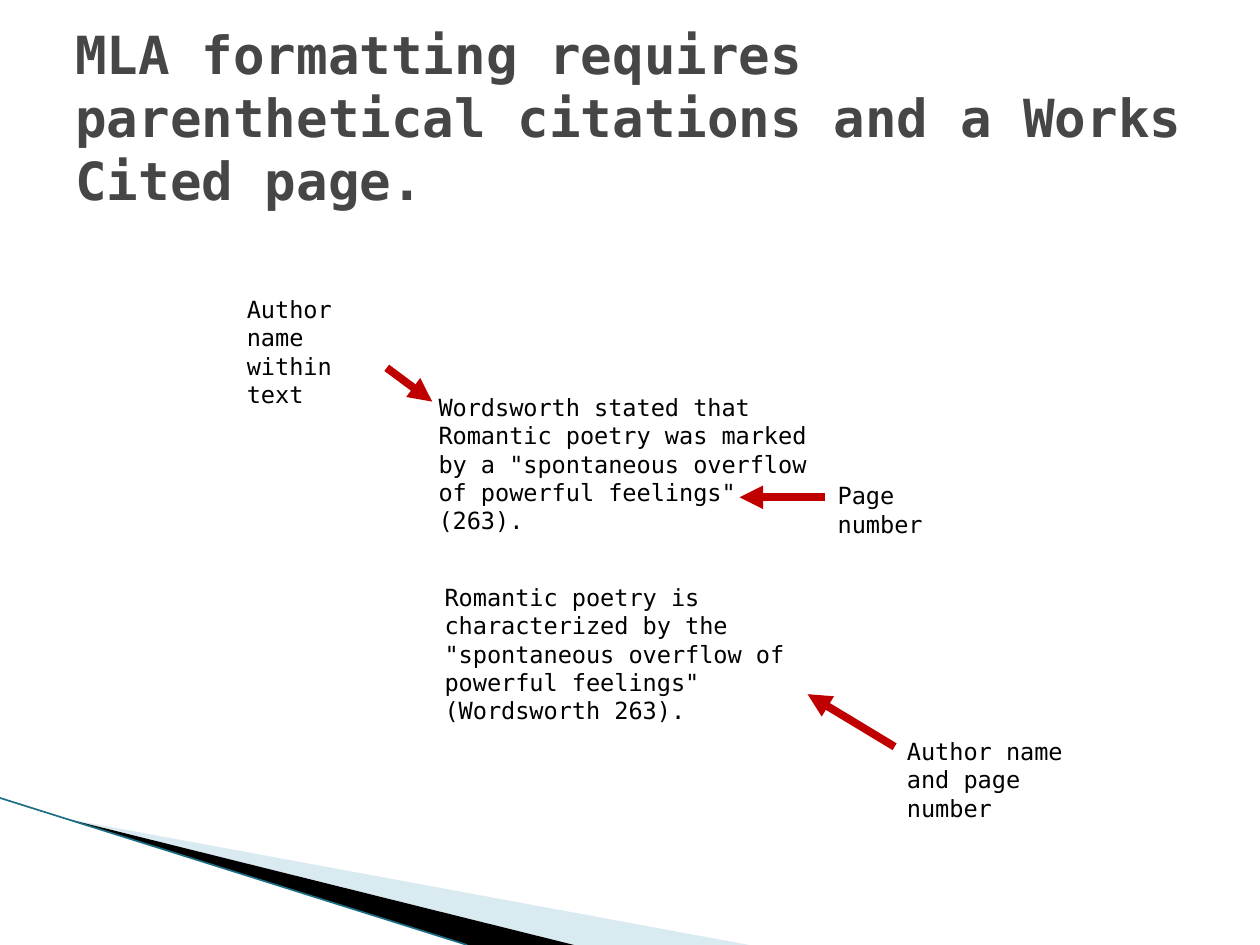
from lxml import etree
from pptx import Presentation
from pptx.dml.color import RGBColor
from pptx.enum import shapes, text
from pptx.oxml.ns import qn
from pptx.util import Pt

FONT = "DejaVu Sans Mono"
BODY = {"name": FONT, "size": Pt(13.5), "bold": False}
HEADING = {"name": FONT, "size": Pt(30), "bold": True}
RED = "C00000"


def set_color(color_format, hex_color):
    color_format.rgb = RGBColor.from_string(hex_color)


def add_text(container, box, wording, font=BODY, color="000000",
             anchor=text.MSO_ANCHOR.TOP, fit=text.MSO_AUTO_SIZE.SHAPE_TO_FIT_TEXT):
    frame = container.add_textbox(*map(Pt, box)).text_frame
    frame.word_wrap = True
    frame.auto_size = fit
    frame.vertical_anchor = anchor
    paragraph = frame.paragraphs[0]
    run = paragraph.add_run()
    run.text = wording
    for name, value in font.items():
        setattr(run.font, name, value)
    set_color(run.font.color, color)


def add_line(container, start, end, color, width, arrow=False):
    line = container.add_connector(
        shapes.MSO_CONNECTOR.STRAIGHT, *map(Pt, (*start, *end)))
    set_color(line.line.color, color)
    line.line.width = Pt(width)
    if arrow:
        etree.SubElement(line.line._get_or_add_ln(), qn("a:tailEnd"), type="triangle")
    etree.SubElement(line._element.spPr, qn("a:effectLst"))


def add_wedge(slide, points, color, opacity=100):
    corners = [(Pt(x), Pt(y)) for x, y in points]
    builder = slide.shapes.build_freeform(*corners[0])
    builder.add_line_segments(corners[1:], close=True)
    wedge = builder.convert_to_shape()
    wedge.shadow.inherit = False
    wedge.fill.solid()
    set_color(wedge.fill.fore_color, color)
    wedge.line.fill.background()
    if opacity < 100:
        fill_color = wedge._element.spPr.find(f"{qn('a:solidFill')}/{qn('a:srgbClr')}")
        etree.SubElement(fill_color, qn("a:alpha"), val=str(opacity * 1000))


def add_corner_decoration(slide, box):
    """Draw the fan of wedges that runs down from the left edge of the box."""
    left, top, width, height = box
    bottom = top + height
    tip = (left + 38.5, top + 12)
    add_wedge(slide, [tip, (left + width, bottom), (left + 328, bottom)], "A0CBDC", 40)
    add_wedge(slide, [tip, (left + 328, bottom), (left + 267, bottom)], "000000")
    add_line(slide.shapes, (left, top), (left + 267, bottom), "1B6E83", 0.95)


def add_callout(slide, box, wording, start, end):
    """Group a label with the arrow that leads from it to the quotation."""
    group = slide.shapes.add_group_shape()
    add_line(group.shapes, start, end, RED, 4.5, arrow=True)
    add_text(group.shapes, box, wording)


def main():
    presentation = Presentation()
    presentation.slide_width, presentation.slide_height = Pt(720), Pt(540)
    slide = presentation.slides.add_slide(presentation.slide_layouts[6])

    add_corner_decoration(slide, (0, 456, 428, 84))
    add_text(slide.shapes, (36, 21.6, 648, 90),
             "MLA formatting requires parenthetical citations and a Works Cited page.",
             HEADING, "464646", text.MSO_ANCHOR.MIDDLE, text.MSO_AUTO_SIZE.NONE)

    quotations = [
        ((243.5, 221, 226, 73),
         'Wordsworth stated that Romantic poetry was marked by a '
         '"spontaneous overflow of powerful feelings" (263).'),
        ((247, 329.5, 222, 89),
         'Romantic poetry is characterized by the '
         '"spontaneous overflow of powerful feelings" (Wordsworth 263).'),
    ]
    for box, wording in quotations:
        add_text(slide.shapes, box, wording)

    callouts = [
        ((471.6, 271.5, 85, 40), "Page number", (471.6, 284.2), (422.6, 284.2)),
        ((134, 165, 89, 56), "Author name within text", (221, 210.2), (247, 229.5)),
        ((511.2, 417.6, 111, 56), "Author name and page number",
         (511.2, 426.7), (461.5, 396.7)),
    ]
    for callout in callouts:
        add_callout(slide, *callout)

    presentation.save("out.pptx")


if __name__ == "__main__":
    main()
